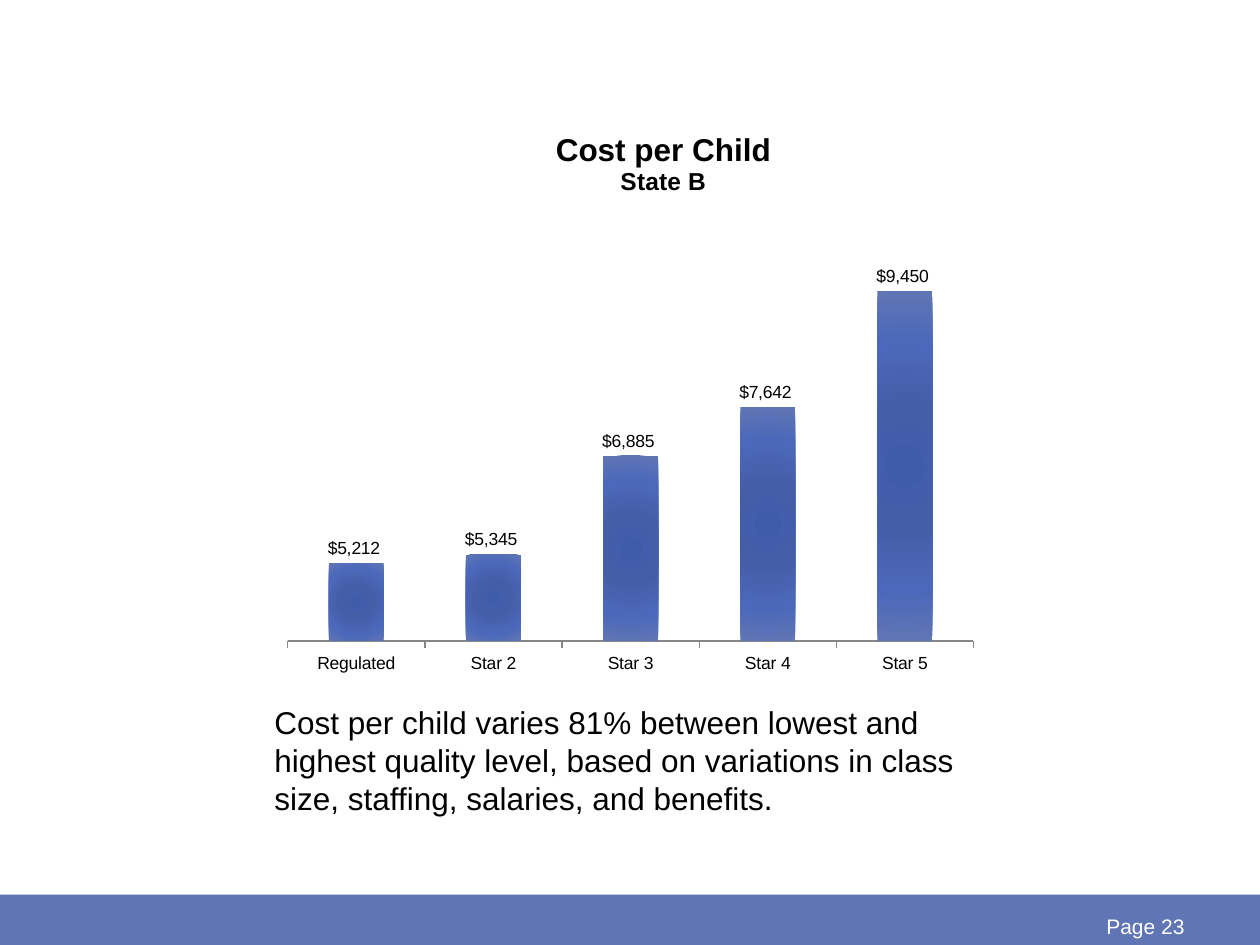
from dataclasses import dataclass

from lxml.etree import SubElement
from pptx import Presentation
from pptx.chart.data import CategoryChartData
from pptx.chart.series import BarSeries
from pptx.dml.color import RGBColor
from pptx.enum.chart import XL_CHART_TYPE as ChartType
from pptx.enum.chart import XL_LABEL_POSITION as LabelPosition
from pptx.enum.chart import XL_TICK_MARK as TickMark
from pptx.enum.shapes import MSO_SHAPE as ShapeKind
from pptx.enum.text import MSO_ANCHOR as Anchor
from pptx.enum.text import PP_ALIGN as Align
from pptx.oxml import parse_xml
from pptx.oxml.ns import nsdecls, qn
from pptx.slide import Slide
from pptx.util import Inches, Pt


@dataclass(frozen=True)
class Theme:
    font: str = "Arial"
    blue: str = "6076B4"
    black: str = "000000"
    white: str = "FFFFFF"
    axis: str = "868686"
    bar_stops: tuple = ((0, "3F5CAA"), (35, "455EA8"), (70, "4B68BA"), (100, "6076B4"))
    body_size: int = 18
    title_size: int = 18
    subtitle_size: int = 14
    page_size: int = 12
    chart_size: int = 10


@dataclass(frozen=True)
class Box:
    left: float
    top: float
    width: float
    height: float

    def lengths(self) -> tuple:
        return tuple(Inches(v) for v in (self.left, self.top, self.width, self.height))


@dataclass(frozen=True)
class Caption:
    words: str
    box: Box
    size: int
    color: str
    align: Align = Align.LEFT
    anchor: Anchor = Anchor.TOP


@dataclass(frozen=True)
class Cost:
    level: str
    dollars: int


THEME = Theme()
DOLLARS = '"$"#,##0_);[Red]\\("$"#,##0\\)'
FOOTER = Box(0, 7.1, 10, 0.4)
CHART = Box(2.17, 0.67, 5.67, 4.75)
PLOT_LAYOUT = {"x": 0.02, "y": 0.18, "w": 0.96, "h": 0.75}
TITLE_LAYOUT = {"x": 0.39, "y": 0.07}
COSTS = (
    Cost("Regulated", 5212),
    Cost("Star 2", 5345),
    Cost("Star 3", 6885),
    Cost("Star 4", 7642),
    Cost("Star 5", 9450),
)
CAPTIONS = (
    Caption("Page 23", Box(8.33, 7.17, 1.17, 0.36), THEME.page_size, THEME.white,
            Align.RIGHT, Anchor.MIDDLE),
    Caption("Cost per child varies 81% between lowest and highest quality level, "
            "based on variations in class size, staffing, salaries, and benefits.",
            Box(2.08, 5.53, 6.17, 1.47), THEME.body_size, THEME.black),
)


def style_font(font, size: int, color: str, bold: bool = False) -> None:
    font.name = THEME.font
    font.size = Pt(size)
    font.bold = bold
    font.color.rgb = RGBColor.from_string(color)


def add_footer(slide: Slide) -> None:
    footer = slide.shapes.add_shape(ShapeKind.RECTANGLE, *FOOTER.lengths())
    footer.shadow.inherit = False
    footer.fill.solid()
    footer.fill.fore_color.rgb = RGBColor.from_string(THEME.blue)
    footer.line.fill.background()


def add_caption(slide: Slide, caption: Caption) -> None:
    frame = slide.shapes.add_textbox(*caption.box.lengths()).text_frame
    frame.word_wrap = True
    frame.vertical_anchor = caption.anchor
    frame.text = caption.words
    paragraph = frame.paragraphs[0]
    paragraph.alignment = caption.align
    style_font(paragraph.runs[0].font, caption.size, caption.color)


def set_layout(parent, fractions: dict) -> None:
    layout = parent.find(qn("c:layout"))
    if layout is None:
        layout = parse_xml(f"<c:layout {nsdecls('c')}/>")
        following = parent.find(qn("c:tx"))
        if following is None:
            parent.insert(0, layout)
        else:
            following.addnext(layout)
    manual = SubElement(layout, qn("c:manualLayout"))
    if "w" in fractions:
        SubElement(manual, qn("c:layoutTarget")).set("val", "inner")
    for axis in ("x", "y"):
        SubElement(manual, qn(f"c:{axis}Mode")).set("val", "edge")
    for key, fraction in fractions.items():
        SubElement(manual, qn(f"c:{key}")).set("val", str(fraction))


def shade_bars(series: BarSeries) -> None:
    series.format.fill.solid()
    stops = "".join(
        f'<a:gs pos="{percent * 1000}"><a:srgbClr val="{color}"/></a:gs>'
        for percent, color in THEME.bar_stops
    )
    gradient = parse_xml(
        f'<a:gradFill {nsdecls("a")} rotWithShape="1"><a:gsLst>{stops}</a:gsLst>'
        '<a:path path="circle"><a:fillToRect l="50000" t="50000" r="50000" b="50000"/>'
        "</a:path></a:gradFill>"
    )
    properties = series.format.fill._xPr
    properties.replace(properties.find(qn("a:solidFill")), gradient)


def add_cost_chart(slide: Slide) -> None:
    data = CategoryChartData(number_format=DOLLARS)
    data.categories = [cost.level for cost in COSTS]
    data.add_series("Series 1", [cost.dollars for cost in COSTS])
    chart = slide.shapes.add_chart(ChartType.COLUMN_CLUSTERED, *CHART.lengths(), data).chart
    style_font(chart.font, THEME.chart_size, THEME.black)
    chart.has_legend = False

    heading = chart.chart_title.text_frame
    heading.text = "Cost per Child\nState B"
    for paragraph, size in zip(heading.paragraphs, (THEME.title_size, THEME.subtitle_size)):
        style_font(paragraph.runs[0].font, size, THEME.black, bold=True)
    chart.chart_title.include_in_layout = False

    costs = chart.value_axis
    costs.minimum_scale, costs.maximum_scale, costs.major_unit = 4000, 11000, 500
    costs.has_major_gridlines = False
    costs.tick_labels.number_format = DOLLARS
    costs.tick_labels.number_format_is_linked = False
    costs.visible = False

    levels = chart.category_axis
    levels.major_tick_mark = TickMark.OUTSIDE
    levels.format.line.color.rgb = RGBColor.from_string(THEME.axis)
    levels.format.line.width = Pt(0.75)

    plot = chart.plots[0]
    plot.gap_width = 150
    plot.vary_by_categories = False
    shade_bars(plot.series[0])
    labels = plot.series[0].data_labels
    labels.show_value = True
    labels.number_format = DOLLARS
    labels.number_format_is_linked = False
    labels.position = LabelPosition.OUTSIDE_END
    style_font(labels.font, THEME.chart_size, THEME.black)

    set_layout(chart.chart_title._element, TITLE_LAYOUT)
    set_layout(plot._element.getparent(), PLOT_LAYOUT)


def main() -> None:
    deck = Presentation()
    deck.slide_width, deck.slide_height = Inches(10), Inches(7.5)
    slide = deck.slides.add_slide(deck.slide_layouts[6])
    add_footer(slide)
    add_cost_chart(slide)
    for caption in CAPTIONS:
        add_caption(slide, caption)
    deck.save("out.pptx")


if __name__ == "__main__":
    main()
